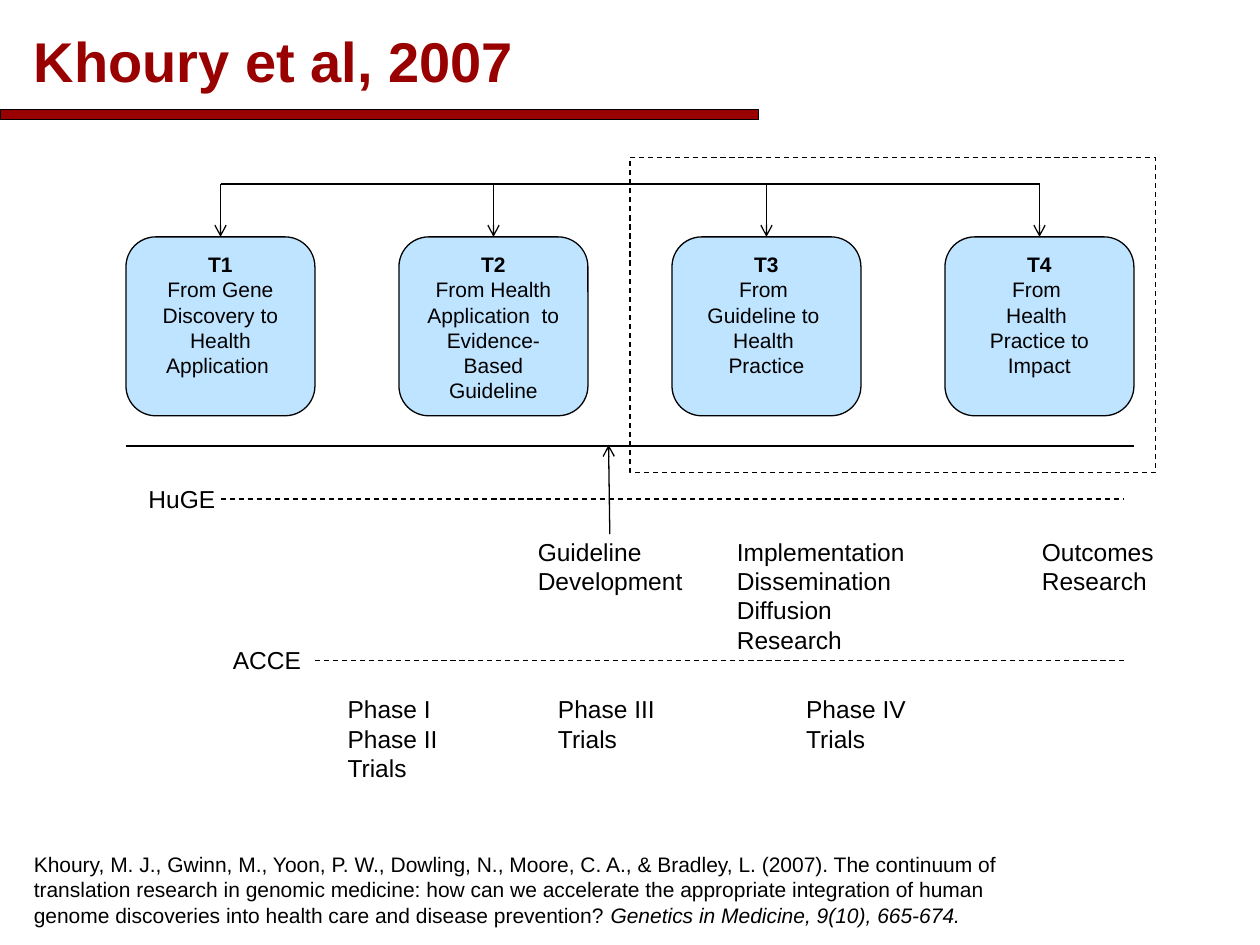
from lxml.etree import SubElement
from pptx import Presentation
from pptx.dml.color import RGBColor
from pptx.enum.dml import MSO_LINE
from pptx.enum.shapes import MSO_CONNECTOR, MSO_SHAPE
from pptx.enum.text import MSO_ANCHOR, PP_ALIGN
from pptx.oxml.ns import qn
from pptx.util import Inches, Pt

BLACK, RED, BLUE = "000000", "990000", "BFE4FF"


def color(value):
    return RGBColor.from_string(value)


class Diagram:
    """Draws the elements of one slide in a shared style."""

    font = "Arial"
    line_width = Pt(0.75)

    def __init__(self, page):
        self.page = page

    def outline(self, line, dashed):
        line.color.rgb = color(BLACK)
        line.width = self.line_width
        if dashed:
            line.dash_style = MSO_LINE.DASH

    def fill_text(self, frame, lines, size, tint=BLACK, bold_first=False, align=PP_ALIGN.LEFT):
        for index, line in enumerate(lines):
            para = frame.paragraphs[0] if index == 0 else frame.add_paragraph()
            para.text = line
            para.alignment = align
            para.font.name = self.font
            para.font.size = Pt(size)
            para.font.bold = bold_first and index == 0
            para.font.color.rgb = color(tint)

    def box(self, kind, left, top, width, height, fill=None, dashed=False):
        box = self.page.shapes.add_shape(
            kind, Inches(left), Inches(top), Inches(width), Inches(height))
        box.shadow.inherit = False
        if fill:
            box.fill.solid()
            box.fill.fore_color.rgb = color(fill)
        else:
            box.fill.background()
        self.outline(box.line, dashed)
        return box

    def stage(self, left, top, lines):
        box = self.box(MSO_SHAPE.ROUNDED_RECTANGLE, left, top, 1.5, 1.42, BLUE)
        box.text_frame.vertical_anchor = MSO_ANCHOR.TOP
        self.fill_text(box.text_frame, lines, 12, bold_first=True, align=PP_ALIGN.CENTER)
        return box

    def text(self, left, top, width, height, lines, size=14, wrap=False, **style):
        box = self.page.shapes.add_textbox(
            Inches(left), Inches(top), Inches(width), Inches(height))
        box.text_frame.word_wrap = wrap
        self.fill_text(box.text_frame, lines, size, **style)
        return box.text_frame

    def line(self, x1, y1, x2, y2, dashed=False, arrow=False):
        line = self.page.shapes.add_connector(
            MSO_CONNECTOR.STRAIGHT, Inches(x1), Inches(y1), Inches(x2), Inches(y2))
        self.outline(line.line, dashed)
        if arrow:
            SubElement(line.line._get_or_add_ln(), qn("a:tailEnd"), type="arrow")
        SubElement(line._element.spPr, qn("a:effectLst"))
        return line


STAGES = [
    ["T1", "From Gene Discovery to Health Application "],
    ["T2", "From Health Application  to Evidence-Based Guideline"],
    ["T3", "From ", "Guideline to ", "Health ", "Practice"],
    ["T4", "From ", "Health ", "Practice to Impact"],
]
LABELS = [
    (1.08, 3.79, 0.74, 0.34, ["HuGE"]),
    (1.75, 5.07, 0.75, 0.34, ["ACCE"]),
    (4.17, 4.21, 1.36, 0.57, ["Guideline", "Development"]),
    (5.75, 4.21, 1.54, 1.04, ["Implementation", "Dissemination", "Diffusion", "Research"]),
    (8.17, 4.21, 1.09, 0.57, ["Outcomes", "Research"]),
    (2.66, 5.46, 0.92, 0.81, ["Phase I", "Phase II", "Trials"]),
    (4.33, 5.46, 0.98, 0.57, ["Phase III", "Trials"]),
    (6.3, 5.46, 1, 0.57, ["Phase IV", "Trials"]),
]
CITATION = (
    "Khoury, M. J., Gwinn, M., Yoon, P. W., Dowling, N., Moore, C. A., & Bradley, L. (2007). "
    "The continuum of translation research in genomic medicine: how can we accelerate the "
    "appropriate integration of human genome discoveries into health care and disease prevention? "
)


def main():
    deck = Presentation()
    deck.slide_width, deck.slide_height = Inches(10), Inches(7.5)
    diagram = Diagram(deck.slides.add_slide(deck.slide_layouts[6]))

    diagram.box(MSO_SHAPE.RECTANGLE, 0, 0.87, 6.02, 0.08, RED)
    title = diagram.text(0.17, 0.09, 9.68, 0.77, ["Khoury et al, 2007"], 32,
                         wrap=True, tint=RED, bold_first=True)
    title.vertical_anchor = MSO_ANCHOR.MIDDLE

    rail, stage_top, pitch = 1.46, 1.88, 6.5 / 3
    diagram.line(1.75, rail, 8.25, rail)
    for index, lines in enumerate(STAGES):
        left = 1 + index * pitch
        center = left + 0.75
        stage = diagram.stage(left, stage_top, lines)
        arrow = diagram.line(center, rail, center, stage_top, arrow=True)
        arrow.end_connect(stage, 0)

    for label in LABELS:
        diagram.text(*label)
    diagram.line(1, 3.54, 9, 3.54)
    diagram.line(1.75, 3.96, 8.92, 3.96, dashed=True)
    diagram.line(2.5, 5.24, 8.92, 5.24, dashed=True)
    diagram.line(4.84, 4.24, 4.83, 3.53, arrow=True)
    diagram.box(MSO_SHAPE.RECTANGLE, 5, 1.25, 4.17, 2.5, dashed=True)

    citation = diagram.text(0.17, 6.71, 8.33, 0.71, [CITATION], 12, wrap=True)
    span = citation.paragraphs[0].add_run()
    span.text = "Genetics in Medicine, 9(10), 665-674."
    span.font.italic = True

    deck.save("out.pptx")


if __name__ == "__main__":
    main()
